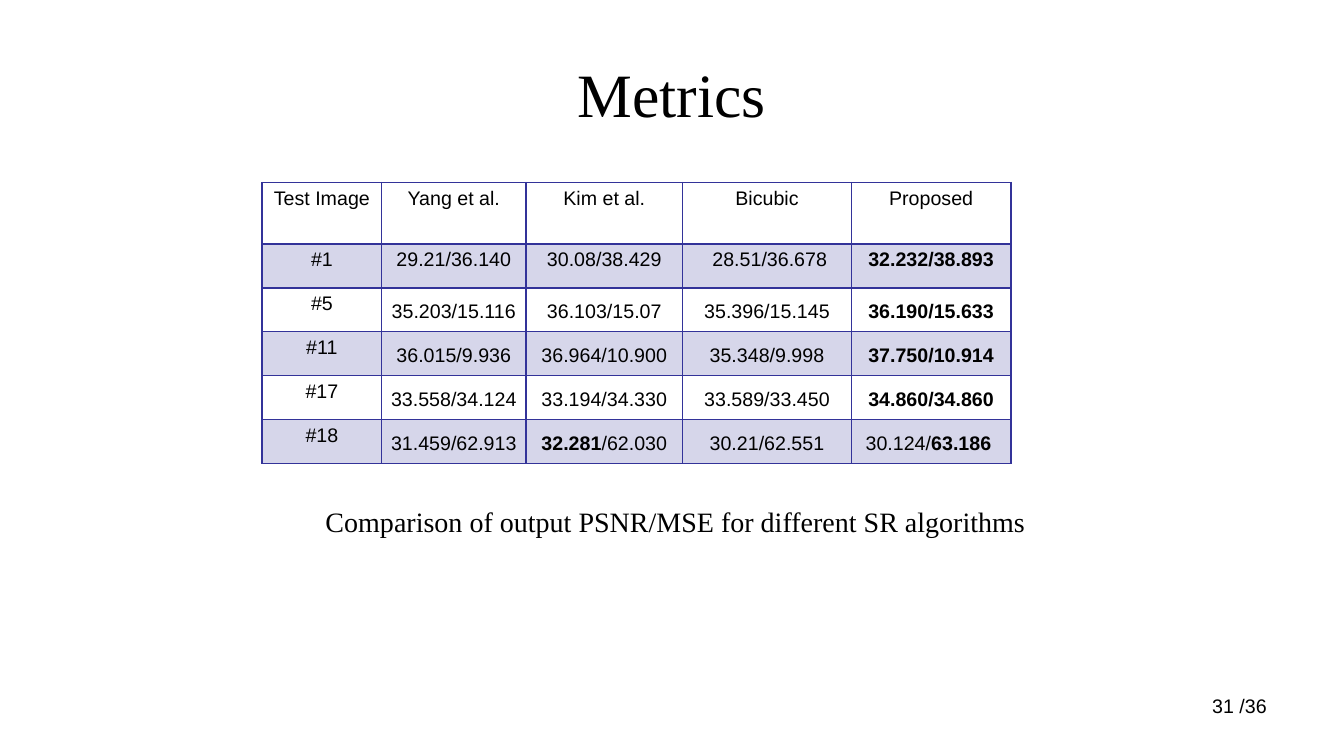
import lxml.etree
import pptx
import pptx.dml.color
import pptx.enum.text
import pptx.oxml.ns
import pptx.util

Pt = pptx.util.Pt
ALIGN = pptx.enum.text.PP_ALIGN
ANCHOR = pptx.enum.text.MSO_ANCHOR
COLORS = {"text": "000000", "accent": "333399"}
SERIF, SANS = "Times New Roman", "Arial"
COLUMN_WIDTHS = [85.5, 103, 112, 120.5, 114]
HEADER_HEIGHT, ROW_HEIGHT = 44, 31.4
SCORES = [
    ["Test Image", "Yang et al.", "Kim et al.", "Bicubic", "Proposed"],
    ["#1", "29.21/36.140", "30.08/38.429", " 28.51/36.678", "*32.232/38.893*"],
    ["#5", "35.203/15.116", "36.103/15.07", "35.396/15.145", "*36.190/15.633*"],
    ["#11", "36.015/9.936", "36.964/10.900", "35.348/9.998", "*37.750/10.914*"],
    ["#17", "33.558/34.124", "33.194/34.330", "33.589/33.450", "*34.860/34.860*"],
    ["#18", "31.459/62.913", "*32.281*/62.030", "30.21/62.551", "30.124/*63.186 *"],
]


def rgb(name):
    """Return the named colour."""
    return pptx.dml.color.RGBColor.from_string(COLORS[name])


def write(paragraph, marked, size, face, align):
    """Fill a paragraph, setting the parts between asterisks in bold."""
    paragraph.alignment = align
    for index, part in enumerate(marked.split("*")):
        if part:
            run = paragraph.add_run()
            run.text = part
            run.font.size = Pt(size)
            run.font.name = face
            run.font.bold = index % 2 == 1
            run.font.color.rgb = rgb("text")


def add_text(slide, box, words, size, face, align, anchor=ANCHOR.TOP, wrap=True):
    """Place one line of text in a box given in points."""
    frame = slide.shapes.add_textbox(*map(Pt, box)).text_frame
    frame.word_wrap = wrap
    frame.vertical_anchor = anchor
    write(frame.paragraphs[0], words, size, face, align)


def sub_element(parent, tag, **attributes):
    """Append a drawing element to its parent."""
    return lxml.etree.SubElement(parent, pptx.oxml.ns.qn(tag), attributes)


def set_borders(cell, widths):
    """Draw the cell's left, right, top and bottom borders."""
    properties = cell._tc.get_or_add_tcPr()
    for position, (side, width) in enumerate(zip("LRTB", widths)):
        line = sub_element(properties, f"a:ln{side}", w=str(Pt(width)))
        sub_element(sub_element(line, "a:solidFill"), "a:srgbClr", val=COLORS["accent"])
        properties.insert(position, line)


def shade(cell, shaded):
    """Tint the cell with the translucent accent or leave it clear."""
    if not shaded:
        cell.fill.background()
        return
    cell.fill.solid()
    cell.fill.fore_color.rgb = rgb("accent")
    tint = cell._tc.tcPr.find(".//" + pptx.oxml.ns.qn("a:srgbClr"))
    sub_element(tint, "a:alpha", val="20000")


def add_scores(slide, left, top):
    """Build the score table with its corner at the given point."""
    height = HEADER_HEIGHT + ROW_HEIGHT * (len(SCORES) - 1)
    table = slide.shapes.add_table(
        len(SCORES), len(COLUMN_WIDTHS), Pt(left), Pt(top),
        Pt(sum(COLUMN_WIDTHS)), Pt(height)).table
    table.first_row = table.horz_banding = False
    for column, width in zip(table.columns, COLUMN_WIDTHS):
        column.width = Pt(width)
    for r, scores in enumerate(SCORES):
        table.rows[r].height = Pt(ROW_HEIGHT if r else HEADER_HEIGHT)
        for c, score in enumerate(scores):
            cell = table.cell(r, c)
            paragraph = cell.text_frame.paragraphs[0]
            write(paragraph, score, 14, SANS, ALIGN.CENTER)
            if r > 1 and c > 0:
                cell.vertical_anchor = ANCHOR.MIDDLE
                cell.margin_left = cell.margin_right = Pt(5)
                cell.margin_top = cell.margin_bottom = 0
                paragraph.line_spacing = 1.15
            shade(cell, r % 2 == 1)
            set_borders(cell, (1, 1, 2 if r == 1 else 1, 2 if r == 0 else 1))


def add_metrics(slide, left, top, width, height):
    """Place the title, score table, caption and page number in the slide area."""
    add_text(slide, (left + 48, top + 21.6, width - 96, 90), "Metrics", 44, SERIF,
             ALIGN.CENTER, ANCHOR.MIDDLE)
    add_scores(slide, left + 187.2, top + 130.3)
    add_text(slide, (left + 225.4, top + 357, 517.7, 31.7),
             "Comparison of output PSNR/MSE for different SR algorithms",
             20, SERIF, ALIGN.LEFT, wrap=False)
    add_text(slide, (left + width - 272, top + height - 48.2, 224, 37.4),
             "31 /36", 14, SANS, ALIGN.RIGHT)


def main():
    """Build and save the slide."""
    deck = pptx.Presentation()
    deck.slide_width, deck.slide_height = Pt(960), Pt(540)
    slide = deck.slides.add_slide(deck.slide_layouts[6])
    add_metrics(slide, 0, 0, 960, 540)
    deck.save("out.pptx")


if __name__ == "__main__":
    main()
